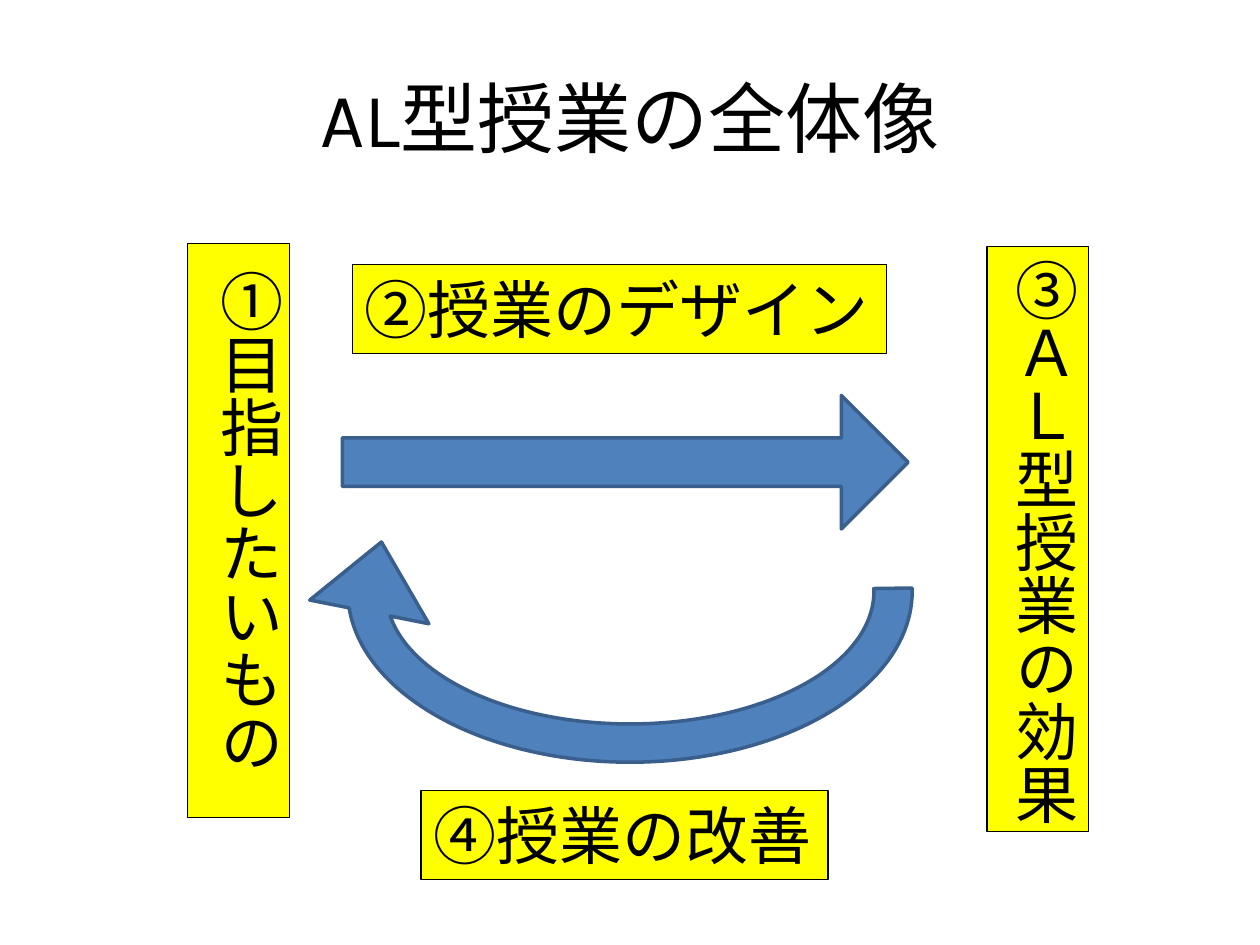
from pptx import Presentation
from pptx.dml.color import RGBColor
from pptx.enum import shapes, text
from pptx.util import Pt


def color(hex_string):
    return RGBColor.from_string(hex_string)


class CycleSlide:
    font = "Karla"
    ink = "000000"
    label_fill = "FFFF00"
    arrow_fill = "4F81BD"
    arrow_line = "3A5F8C"

    def __init__(self, deck):
        self.slide = deck.slides.add_slide(deck.slide_layouts[5])

    def paint(self, shape, fill, line, width):
        shape.fill.solid()
        shape.fill.fore_color.rgb = color(fill)
        shape.line.color.rgb = color(line)
        shape.line.width = Pt(width)

    def set_text(self, frame, words, size, align):
        para = frame.paragraphs[0]
        para.text = words
        para.alignment = align
        para.font.name = self.font
        para.font.size = Pt(size)
        para.font.color.rgb = color(self.ink)

    def title(self, words, *bounds):
        title = self.slide.shapes.title
        title.left, title.top, title.width, title.height = map(Pt, bounds)
        title.text_frame.vertical_anchor = text.MSO_ANCHOR.MIDDLE
        self.set_text(title.text_frame, words, 44, text.PP_ALIGN.CENTER)

    def label(self, words, *bounds, vertical=False):
        box = self.slide.shapes.add_textbox(*map(Pt, bounds))
        self.paint(box, self.label_fill, self.ink, 0.75)
        frame = box.text_frame
        frame.word_wrap = False
        frame.auto_size = text.MSO_AUTO_SIZE.SHAPE_TO_FIT_TEXT
        if vertical:
            frame._txBody.bodyPr.set("vert", "eaVert")
        self.set_text(frame, words, 36, text.PP_ALIGN.LEFT)

    def arrow(self, preset, adjustments, *bounds, rotation=0):
        arrow = self.slide.shapes.add_shape(preset, *map(Pt, bounds))
        arrow.shadow.inherit = False
        arrow.rotation = rotation
        for index, value in enumerate(adjustments):
            arrow.adjustments[index] = value
        self.paint(arrow, self.arrow_fill, self.arrow_line, 2)


def main():
    deck = Presentation()
    deck.slide_width, deck.slide_height = Pt(720), Pt(540)
    cycle = CycleSlide(deck)
    preset = shapes.MSO_SHAPE

    cycle.title("AL型授業の全体像", 36, 21.6, 648, 90)
    cycle.label(" ①目指したいもの", 107.2, 139, 58.2, 328.3, vertical=True)
    cycle.arrow(preset.RIGHT_ARROW, [0.363, 0.5], 195.6, 226, 323.3, 76.3)
    cycle.label("③ＡＬ型授業の効果", 564, 141, 58.2, 334, vertical=True)
    cycle.label("②授業のデザイン", 201.4, 151.2, 305.3, 51)
    cycle.arrow(preset.CIRCULAR_ARROW, [0.09, 9.444, 213.319, 107.576, 0.143],
                175, 216.7, 370, 242.6, rotation=180)
    cycle.label("④授業の改善", 240.6, 451.6, 232.6, 51)

    deck.save("out.pptx")


if __name__ == "__main__":
    main()
